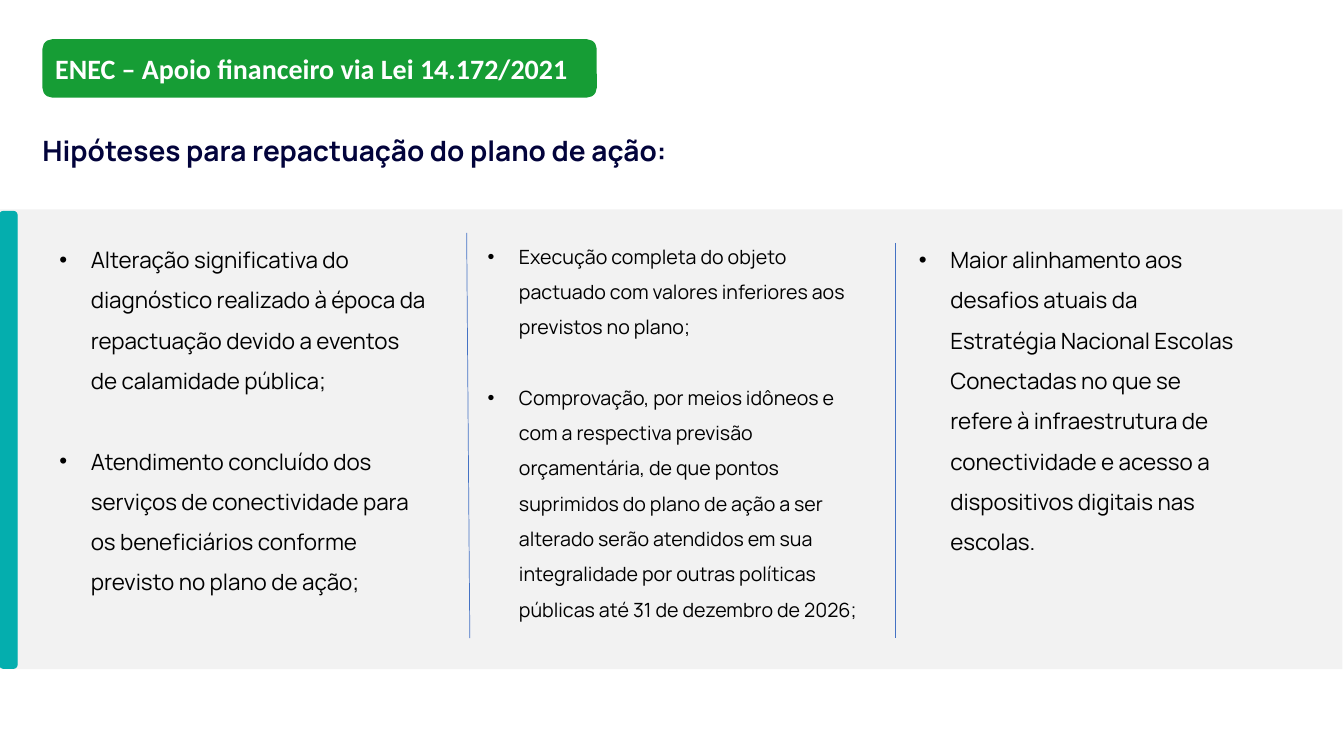
from dataclasses import dataclass
from typing import Optional

from pptx import Presentation
from pptx.dml import color
from pptx.enum import shapes, text
from pptx.oxml import xmlchemy
from pptx.util import Cm, Pt

TEXT_TOP = 5.87
RULE_BOTTOM = 16.08
INDENT = 0.79
LEADING = 1.5


@dataclass
class Panel:
    left: float
    top: float
    width: float
    height: float
    fill: str
    line: Optional[str] = None
    radius: Optional[float] = None


@dataclass
class Column:
    left: float
    width: float
    height: float
    size: int
    items: list[str]


@dataclass
class Rule:
    x1: float
    y1: float
    x2: float


BAND = Panel(0, 5.28, 33.83, 11.58, "F2F2F2")
BAR = Panel(0, 5.33, 0.43, 11.51, "04AEAE", "04AEAE", 0.185)
TAG = Panel(1.07, 0.99, 13.97, 1.47, "169D35", radius=0.167)

COLUMNS = [
    Column(1.5, 9.3, 9.25, 16, [
        "Alteração significativa do diagnóstico realizado à época da "
        "repactuação devido a eventos de calamidade pública;",
        "Atendimento concluído dos serviços de conectividade para os "
        "beneficiários conforme previsto no plano de ação;",
    ]),
    Column(12.29, 9.68, 9.88, 14, [
        "Execução completa do objeto pactuado com valores inferiores aos "
        "previstos no plano;",
        "Comprovação, por meios idôneos e com a respectiva previsão "
        "orçamentária, de que pontos suprimidos do plano de ação a ser "
        "alterado serão atendidos em sua integralidade por outras políticas "
        "públicas até 31 de dezembro de 2026;",
    ]),
    Column(23.16, 8.23, 8.2, 16, [
        "Maior alinhamento aos desafios atuais da Estratégia Nacional Escolas "
        "Conectadas no que se refere à infraestrutura de conectividade e "
        "acesso a dispositivos digitais nas escolas.",
    ]),
]

RULES = [Rule(11.76, TEXT_TOP, 11.84), Rule(22.56, 6.12, 22.56)]


def rgb(value: str) -> color.RGBColor:
    return color.RGBColor.from_string(value)


def add_panel(s, panel: Panel):
    kind = shapes.MSO_SHAPE.RECTANGLE
    if panel.radius is not None:
        kind = shapes.MSO_SHAPE.ROUNDED_RECTANGLE
    sp = s.shapes.add_shape(kind, Cm(panel.left), Cm(panel.top),
                            Cm(panel.width), Cm(panel.height))
    if panel.radius is not None:
        sp.adjustments[0] = panel.radius
    sp.shadow.inherit = False
    sp.fill.solid()
    sp.fill.fore_color.rgb = rgb(panel.fill)
    if panel.line:
        sp.line.color.rgb = rgb(panel.line)
        sp.line.width = Pt(0.75)
    else:
        sp.line.fill.background()
    return sp


def add_box(s, left: float, top: float, width: float, height: float):
    tf = s.shapes.add_textbox(Cm(left), Cm(top), Cm(width), Cm(height)).text_frame
    tf.word_wrap = True
    tf.auto_size = text.MSO_AUTO_SIZE.SHAPE_TO_FIT_TEXT
    tf.margin_left = tf.margin_top = tf.margin_right = tf.margin_bottom = 0
    return tf


def write(p, words: str, *, size: int, font: str = "Manrope", fill: str = "000000",
          bold: bool = False, align=text.PP_ALIGN.LEFT,
          leading: Optional[float] = None, before: float = 0) -> None:
    p.alignment = align
    if leading:
        p.line_spacing = leading
    if before:
        p.space_before = Pt(before)
    r = p.add_run()
    r.text = words
    r.font.name = font
    r.font.size = Pt(size)
    r.font.bold = bold
    r.font.color.rgb = rgb(fill)


def add_bullet(p) -> None:
    pPr = p._p.get_or_add_pPr()
    pPr.set("marL", str(Cm(INDENT)))
    pPr.set("indent", str(-Cm(INDENT)))
    xmlchemy.OxmlElement("a:buFont")
    for tag, key, value in (("a:buFont", "typeface", "Arial"), ("a:buChar", "char", "•")):
        bullet = xmlchemy.OxmlElement(tag)
        bullet.set(key, value)
        pPr.append(bullet)


def add_column(s, column: Column) -> None:
    tf = add_box(s, column.left, TEXT_TOP, column.width, column.height)
    blank_line = 1.2 * LEADING * column.size
    for i, item in enumerate(column.items):
        p = tf.add_paragraph() if i else tf.paragraphs[0]
        add_bullet(p)
        write(p, item, size=column.size, leading=LEADING, before=blank_line if i else 0)


def add_rule(s, rule: Rule) -> None:
    line = s.shapes.add_connector(shapes.MSO_CONNECTOR.STRAIGHT, Cm(rule.x1), Cm(rule.y1),
                                  Cm(rule.x2), Cm(RULE_BOTTOM))
    line.line.color.rgb = rgb("4472C4")
    line.line.width = Pt(0.5)
    line._element.spPr.append(xmlchemy.OxmlElement("a:effectLst"))


def main() -> None:
    prs = Presentation()
    prs.slide_width, prs.slide_height = Cm(33.87), Cm(19.05)
    s = prs.slides.add_slide(prs.slide_layouts[6])

    add_panel(s, BAND)
    tf = add_box(s, 1.07, 2.95, 24.05, 1.27)
    write(tf.paragraphs[0], "Hipóteses para repactuação do plano de ação:", size=20,
          fill="02033B", bold=True, align=text.PP_ALIGN.JUSTIFY, leading=LEADING)
    for column in COLUMNS:
        add_column(s, column)
    for rule in RULES:
        add_rule(s, rule)
    add_panel(s, BAR)

    tf = add_panel(s, TAG).text_frame
    tf.word_wrap = True
    tf.vertical_anchor = text.MSO_ANCHOR.MIDDLE
    write(tf.paragraphs[0], "ENEC – Apoio financeiro via Lei 14.172/2021", size=20,
          font="Calibri", fill="FFFFFF", bold=True)

    prs.save("out.pptx")


if __name__ == "__main__":
    main()
